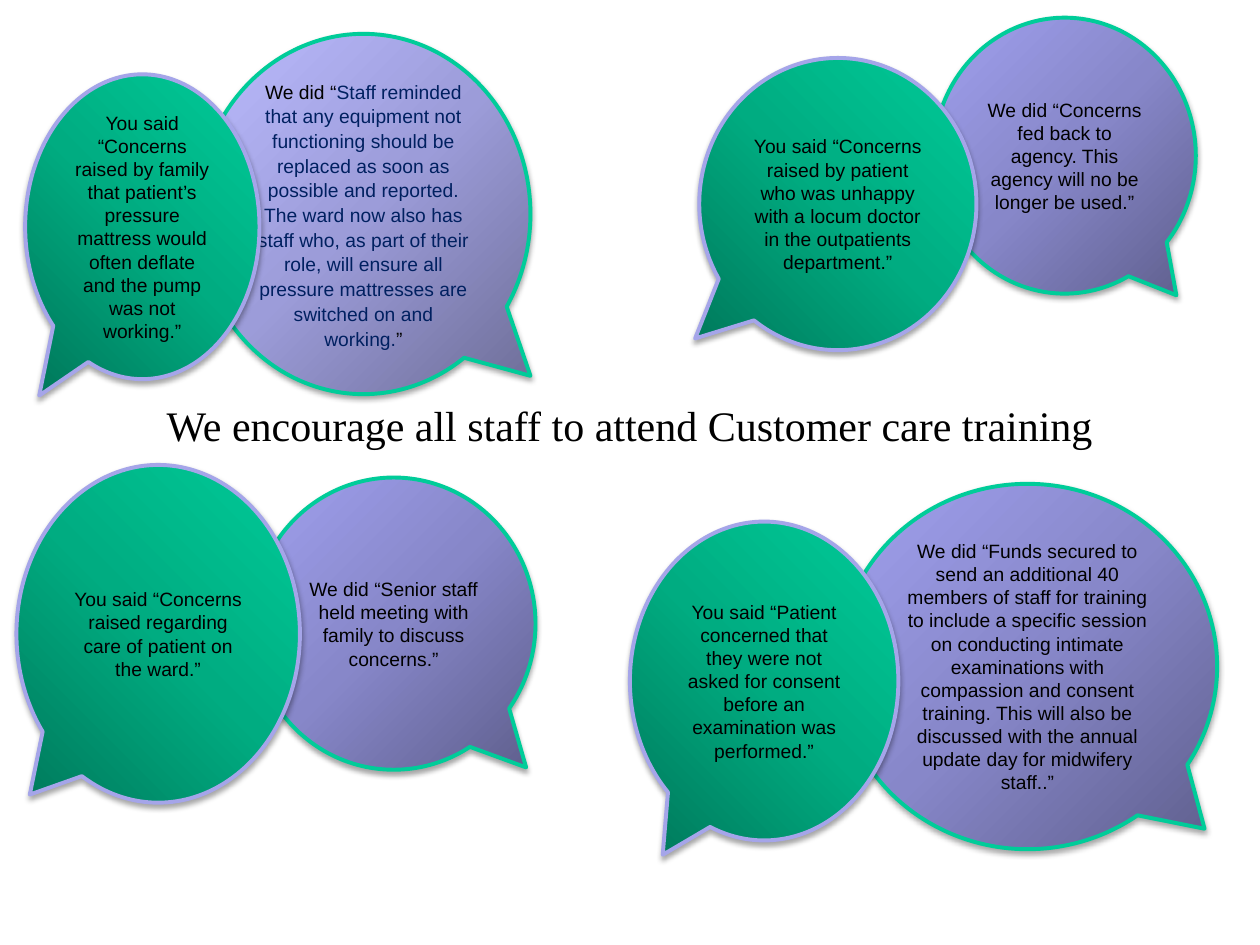
"""Build a slide of paired 'You said' and 'We did' speech bubbles."""
from dataclasses import dataclass

from pptx import Presentation
from pptx.dml.color import RGBColor as RGB
from pptx.enum.shapes import MSO_SHAPE as Shape
from pptx.enum.text import MSO_ANCHOR as Anchor, MSO_AUTO_SIZE as Auto, PP_ALIGN as Align
from pptx.oxml import parse_xml
from pptx.oxml.ns import nsdecls, qn
from pptx.util import Pt


@dataclass(frozen=True)
class Theme:
    black: str = "000000"
    navy: str = "002060"
    green: str = "00CC99"
    lilac: str = "A5A5E9"
    greens: tuple = ("00795B", "00AC81", "00CC99")
    purples: tuple = ("5F5F8D", "8787C9", "A0A0EE")
    pales: tuple = ("6E6E98", "9C9CD9", "BBBBFF")
    sans: str = "Arial"
    serif: str = "Times New Roman"
    small: float = 11
    large: float = 24
    edge: float = 2.25


T = Theme()


@dataclass(frozen=True)
class Look:
    tones: tuple
    line: str
    focus: str


SAID = Look(T.greens, T.lilac, 't="100000" r="100000"')
DID = Look(T.purples, T.green, 'l="100000" t="100000"')
PALE = Look(T.pales, T.green, 'l="100000" t="100000"')


def add_run(para, text, face, size, color):
    run = para.add_run()
    run.text = text
    run.font.name = face
    run.font.size = Pt(size)
    run.font.color.rgb = RGB.from_string(color)


def shade(shape, look):
    stops = "".join(
        f'<a:gs pos="{i * 50000}"><a:srgbClr val="{tone}"/></a:gs>'
        for i, tone in enumerate(look.tones)
    )
    fill = parse_xml(
        f'<a:gradFill {nsdecls("a")} rotWithShape="1"><a:gsLst>{stops}</a:gsLst>'
        f'<a:path path="circle"><a:fillToRect {look.focus}/></a:path></a:gradFill>'
    )
    shape._element.spPr.find(qn("a:prstGeom")).addnext(fill)


def cast(shape):
    shape._element.spPr.append(parse_xml(
        f'<a:effectLst {nsdecls("a")}><a:outerShdw blurRad="{Pt(3.1)}" dist="{Pt(1.8)}" '
        f'dir="5400000" rotWithShape="0"><a:srgbClr val="{T.black}">'
        '<a:alpha val="35000"/></a:srgbClr></a:outerShdw></a:effectLst>'
    ))


def add_bubble(slide, look, box, tail, *runs):
    shape = slide.shapes.add_shape(Shape.OVAL_CALLOUT, *map(Pt, box))
    for i, value in enumerate(tail):
        shape.adjustments[i] = value
    shape.line.color.rgb = RGB.from_string(look.line)
    shape.line.width = Pt(T.edge)
    shade(shape, look)
    cast(shape)
    frame = shape.text_frame
    frame.word_wrap = True
    frame.vertical_anchor = Anchor.MIDDLE
    para = frame.paragraphs[0]
    para.alignment = Align.CENTER
    for text, color in runs:
        add_run(para, text, T.sans, T.small, color)
    return para


def add_title(slide, text):
    title = slide.shapes.title
    title.left, title.top, title.width, title.height = map(Pt, (54, 224.6, 612, 36))
    frame = title.text_frame
    frame.auto_size = Auto.NONE
    frame.vertical_anchor = Anchor.TOP
    para = frame.paragraphs[0]
    para.alignment = Align.CENTER
    add_run(para, text, T.serif, T.large, T.black)


def main():
    deck = Presentation()
    deck.slide_width, deck.slide_height = Pt(720), Pt(540)
    slide = deck.slides.add_slide(deck.slide_layouts[5])
    add_title(slide, "We encourage all staff to attend Customer care training")

    add_bubble(slide, DID, (478.8, 276.5, 216.7, 208.8), (0.467, 0.444), (
        "We did “Funds secured to send an additional 40 members of staff for "
        "training to include a specific session on conducting intimate "
        "examinations with compassion and consent training. This will also be "
        "discussed with the annual update day for midwifery staff..”", T.black))
    add_bubble(slide, DID, (144, 272.9, 162, 167), (0.467, 0.492), (
        "We did “Senior staff held meeting with family to discuss concerns.”",
        T.black))
    add_bubble(slide, SAID, (9.4, 265.7, 162, 193), (-0.453, 0.476), (
        "You said “Concerns raised regarding care of patient on the ward.”",
        T.black))
    para = add_bubble(
        slide, PALE, (112.3, 19.4, 190.8, 205.9), (0.5, 0.449),
        ("We did “", T.black),
        ("Staff reminded that any equipment not functioning should be replaced "
         "as soon as possible and reported. The ward now also has staff who, as "
         "part of their role, will ensure all pressure mattresses are switched "
         "on and working.", T.navy),
        ("”", T.black))
    para.line_spacing = 1.07
    para.space_after = Pt(8)
    add_bubble(slide, DID, (533.5, 10.1, 149.8, 157.7), (0.426, 0.506), (
        "We did “Concerns fed back to agency. This agency will no be longer be "
        "used.”", T.black))
    add_bubble(slide, SAID, (360, 298.1, 153.4, 182.2), (-0.378, 0.545), (
        "You said “Patient concerned that they were not asked for consent "
        "before an examination was performed.”", T.black))
    add_bubble(slide, SAID, (399.6, 33.1, 158.4, 167), (-0.515, 0.46), (
        "You said “Concerns raised by patient who was unhappy with a locum "
        "doctor in the outpatients department.”", T.black))
    add_bubble(slide, SAID, (14.4, 42.5, 133.9, 174.2), (-0.44, 0.554), (
        "You said “Concerns raised by family that patient’s pressure mattress "
        "would often deflate and the pump was not working.”", T.black))

    deck.save("out.pptx")


if __name__ == "__main__":
    main()
